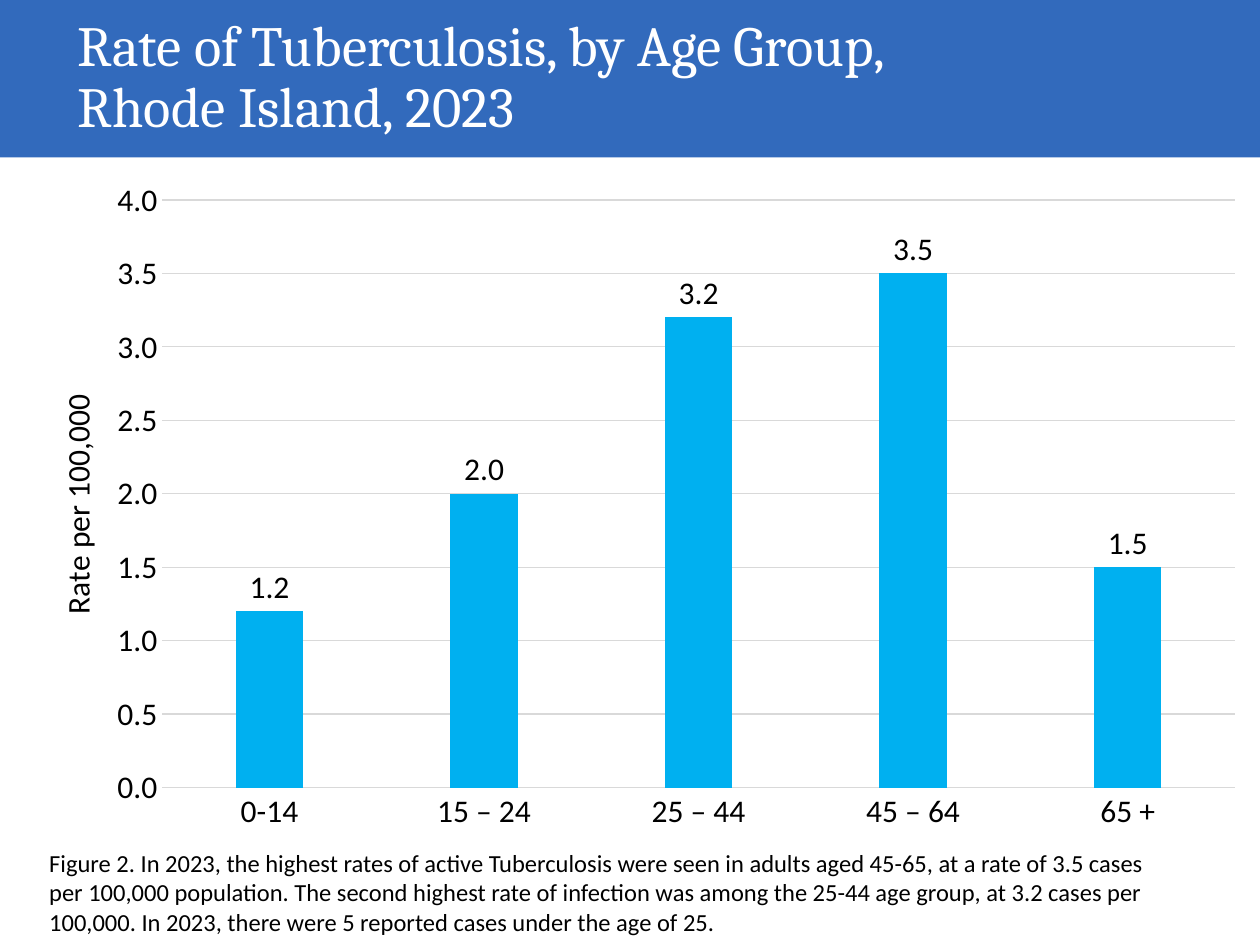
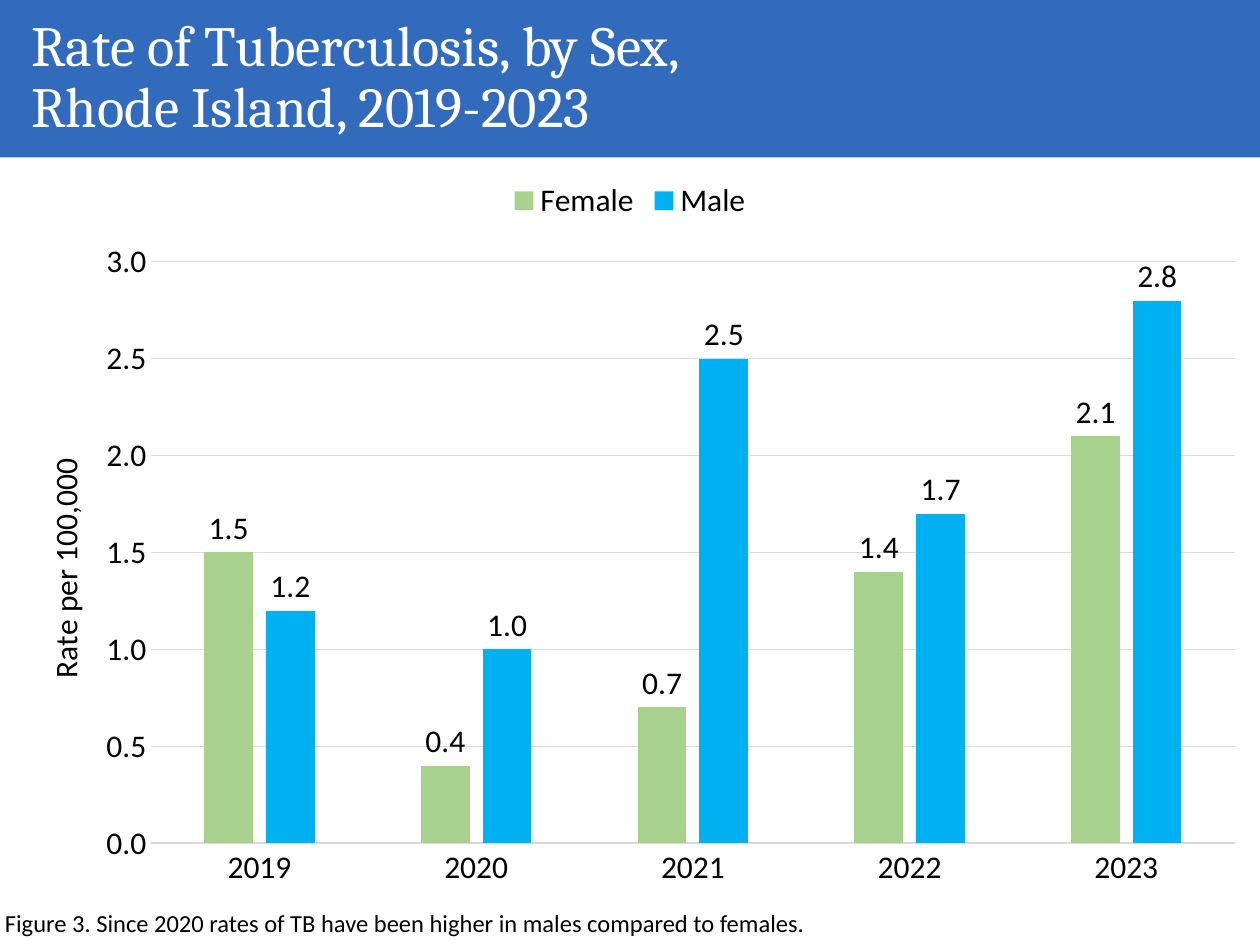
from lxml import etree
from pptx import Presentation
from pptx.chart.data import CategoryChartData
from pptx.dml.color import RGBColor
from pptx.enum.chart import (XL_CHART_TYPE, XL_LABEL_POSITION,
                             XL_LEGEND_POSITION, XL_TICK_MARK)
from pptx.enum.shapes import MSO_SHAPE
from pptx.enum.text import MSO_ANCHOR
from pptx.oxml.ns import qn
from pptx.util import Pt

COLUMNS = XL_CHART_TYPE.COLUMN_CLUSTERED
ABOVE = XL_LABEL_POSITION.OUTSIDE_END
TOP = XL_LEGEND_POSITION.TOP
NO_TICK = XL_TICK_MARK.NONE
RECT = MSO_SHAPE.RECTANGLE
UPPER, MIDDLE = MSO_ANCHOR.TOP, MSO_ANCHOR.MIDDLE

WIDTH, HEIGHT, BAND = 720, 540, 90
BLUE, SKY, GREEN = "326ABC", "00B0F0", "A9D18E"
GRAY, BLACK, WHITE = "D9D9D9", "000000", "FFFFFF"
HEAD, BODY = "Cambria", "Calibri"


def color(code):
    return RGBColor.from_string(code)


def style(font, size=18, name=BODY, ink=BLACK):
    font.size, font.name, font.bold = Pt(size), name, False
    font.color.rgb = color(ink)


def add_text(slide, text, box, size=14, name=BODY, ink=BLACK,
             anchor=UPPER, space=1.0):
    frame = slide.shapes.add_textbox(*map(Pt, box)).text_frame
    frame.word_wrap = True
    frame.vertical_anchor = anchor
    para = frame.paragraphs[0]
    para.text = text
    para.line_spacing = space
    for run in para.runs:
        style(run.font, size, name, ink)


def add_band(slide, title, left):
    band = slide.shapes.add_shape(RECT, 0, 0, Pt(WIDTH), Pt(BAND))
    band.shadow.inherit = False
    band.fill.solid()
    band.fill.fore_color.rgb = color(BLUE)
    band.line.fill.background()
    add_text(slide, title, (left, 8, 576, 74), size=32.4, name=HEAD,
             ink=WHITE, anchor=MIDDLE, space=0.9)


def place(parent, index, **parts):
    """Fix the layout of a chart part, in fractions of the chart."""
    for old in parent.findall(qn("c:layout")):
        parent.remove(old)
    layout = etree.Element(qn("c:layout"))
    manual = etree.SubElement(layout, qn("c:manualLayout"))
    if "w" in parts:
        etree.SubElement(manual, qn("c:layoutTarget"), val="inner")
    for mode in ("xMode", "yMode"):
        etree.SubElement(manual, qn("c:" + mode), val="edge")
    for key, val in parts.items():
        etree.SubElement(manual, qn("c:" + key), val=str(val))
    parent.insert(index, layout)


def set_line(line, ink=GRAY):
    line.color.rgb = color(ink)
    line.width = Pt(0.75)


def set_axes(chart, top, name_y):
    cats, rates = chart.category_axis, chart.value_axis
    for axis in (cats, rates):
        axis.major_tick_mark = axis.minor_tick_mark = NO_TICK
        style(axis.tick_labels.font)
    set_line(cats.format.line)
    rates.format.line.fill.background()
    set_line(rates.major_gridlines.format.line)
    rates.minimum_scale, rates.maximum_scale = 0, top
    rates.major_unit = 0.5
    rates.tick_labels.number_format = "0.0"
    rates.tick_labels.number_format_is_linked = False

    name = rates.axis_title
    para = name.text_frame.paragraphs[0]
    para.text = "Rate per 100,000"
    style(para.runs[0].font)
    name.element.find(".//" + qn("a:bodyPr")).set("rot", "-5400000")
    place(name.element, 1, x=0.03, y=name_y)


def add_columns(slide, box, cats, series, top, name_y, y, h, legend=False):
    """Add a column chart; series holds (name, colour, values) rows."""
    data = CategoryChartData(number_format="0.0")
    data.categories = cats
    for name, _, vals in series:
        data.add_series(name, vals)
    chart = slide.shapes.add_chart(COLUMNS, *map(Pt, box), data).chart
    style(chart.font)
    chart.has_title = False
    chart.has_legend = legend
    if legend:
        chart.legend.position = TOP
        chart.legend.include_in_layout = False
        style(chart.legend.font)

    plot = chart.plots[0]
    plot.gap_width, plot.overlap = 219, -27
    plot.vary_by_categories = False
    for bars, (_, ink, _) in zip(plot.series, series):
        bars.format.fill.solid()
        bars.format.fill.fore_color.rgb = color(ink)
    plot.has_data_labels = True
    labels = plot.data_labels
    labels.show_value = True
    labels.position = ABOVE
    labels.number_format = "0.0"
    labels.number_format_is_linked = False
    style(labels.font)
    set_axes(chart, top, name_y)
    area = chart.element.find(".//" + qn("c:plotArea"))
    place(area, 0, x=0.12, y=y, w=0.86, h=h)


def add_ages(deck):
    slide = deck.slides.add_slide(deck.slide_layouts[6])
    add_band(slide, "Rate of Tuberculosis, by Age Group,\vRhode Island, 2023",
             37.4)
    add_columns(slide, (7.2, 95, 712.8, 386),
                ["0-14", "15 – 24", "25 – 44", "45 – 64", "65 +"],
                [("Rate", SKY, [1.2, 2.0, 3.2, 3.5, 1.5])],
                top=4, name_y=0.33, y=0.05, h=0.87)
    add_text(slide,
             "Figure 2. In 2023, the highest rates of active Tuberculosis were "
             "seen in adults aged 45-65, at a rate of 3.5 cases per 100,000 "
             "population. The second highest rate of infection was among the "
             "25-44 age group, at 3.2 cases per 100,000. In 2023, there were "
             "5 reported cases under the age of 25.",
             (21, 481, 649.4, 58.3))


def add_sexes(deck):
    slide = deck.slides.add_slide(deck.slide_layouts[6])
    add_band(slide, "Rate of Tuberculosis, by Sex,\vRhode Island, 2019-2023",
             10.8)
    add_text(slide,
             "Figure 3. Since 2020 rates of TB have been higher in males "
             "compared to females.",
             (-4.3, 515.5, 563, 24.5))
    add_columns(slide, (0, 95, WIDTH, 420.5),
                ["2019", "2020", "2021", "2022", "2023"],
                [("Female", GREEN, [1.5, 0.4, 0.7, 1.4, 2.1]),
                 ("Male", SKY, [1.2, 1.0, 2.5, 1.7, 2.8])],
                top=3, name_y=0.39, y=0.13, h=0.79, legend=True)


def main():
    deck = Presentation()
    deck.slide_width, deck.slide_height = Pt(WIDTH), Pt(HEIGHT)
    add_ages(deck)
    add_sexes(deck)
    deck.save("out.pptx")


if __name__ == "__main__":
    main()
